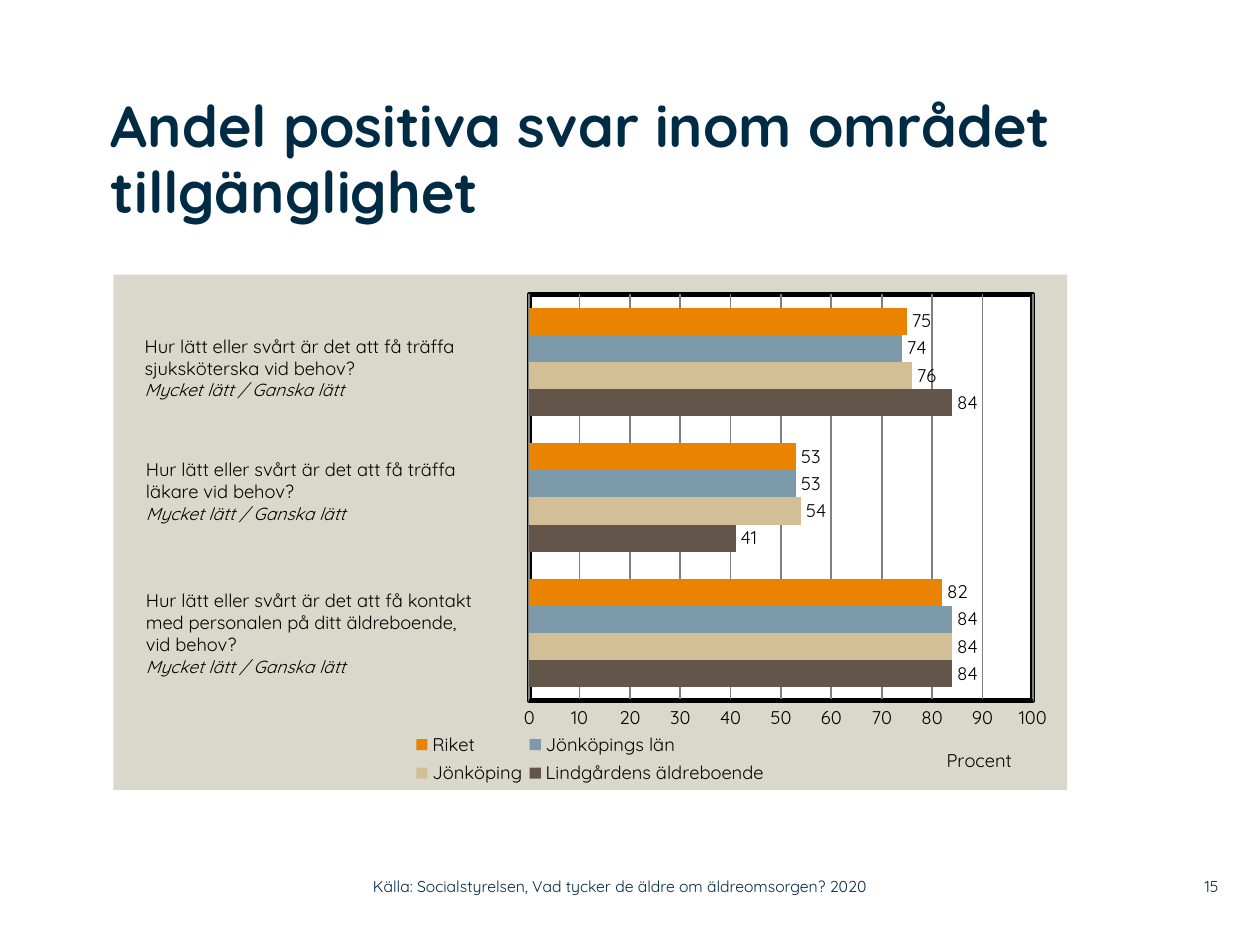
from dataclasses import dataclass
from lxml import etree
from pptx import Presentation
from pptx import util as u
from pptx.chart.data import CategoryChartData
from pptx.dml.color import RGBColor
from pptx.enum import chart as ch, text as tx
from pptx.oxml import parse_xml
from pptx.oxml.ns import nsdecls, qn


@dataclass(frozen=True)
class Theme:
    """Colours, type sizes and font of the slide."""
    font: str = "Quicksand"
    navy: str = "002B45"
    black: str = "000000"
    white: str = "FFFFFF"
    panel: str = "DAD7CB"
    grid: str = "808080"
    head: float = 33
    body: float = 10.5
    note: float = 10
    foot: float = 9


T = Theme()
SERIES = [
    ("Lindgårdens äldreboende", (84, 41, 84), "635549"),
    ("Jönköping", (84, 54, 76), "D3BF96"),
    ("Jönköpings län", (84, 53, 74), "7D9AAA"),
    ("Riket", (82, 53, 75), "E98300"),
]
ANSWER = "Mycket lätt / Ganska lätt"
ASKS = [
    ((1.05, 2.61, 3, 0.63),
     ["Hur lätt eller svårt är det att få träffa sjuksköterska vid behov?"]),
    ((1.06, 3.59, 2.91, 0.63),
     ["Hur lätt eller svårt är det att få träffa", "läkare vid behov?"]),
    ((1.06, 4.63, 2.99, 0.81),
     ["Hur lätt eller svårt är det att få kontakt",
      "med personalen på ditt äldreboende,", "vid behov?"]),
]


def style(font, size, color, bold=False, italic=False):
    """Set the face, size and colour of a font."""
    font.name, font.size = T.font, u.Pt(size)
    font.bold, font.italic = bold, italic
    font.color.rgb = RGBColor.from_string(color)


def add_text(slide, box, lines, size, color, bold=False, inset=True):
    """Add a wrapped text box with one paragraph per line."""
    frame = slide.shapes.add_textbox(*map(u.Inches, box)).text_frame
    frame.word_wrap = True
    if not inset:
        frame.margin_left = frame.margin_right = 0
        frame.margin_top = frame.margin_bottom = 0
    frame.text = "\n".join(lines)
    for para in frame.paragraphs:
        for run in para.runs:
            style(run.font, size, color, bold)
    return frame


def add_title(slide, box):
    """Add the heading."""
    lines = ["Andel positiva svar inom området tillgänglighet"]
    frame = add_text(slide, box, lines, T.head, T.navy, True, False)
    frame.paragraphs[0].line_spacing = 0.95


def add_ask(slide, box, lines):
    """Add one question with its answer options in italics."""
    frame = add_text(slide, box, lines + [ANSWER], T.body, T.black)
    style(frame.paragraphs[-1].runs[0].font, T.note, T.black, italic=True)


def add_foot(slide, box, line, align):
    """Add one footer text."""
    frame = add_text(slide, box, [line], T.foot, T.navy, inset=False)
    frame.vertical_anchor = tx.MSO_ANCHOR.MIDDLE
    frame.paragraphs[0].alignment = align


def make_layout(inner=False, **parts):
    """Return a manual chart layout with the given fractions."""
    layout = parse_xml(f"<c:layout {nsdecls('c')}><c:manualLayout/></c:layout>")
    if inner:
        etree.SubElement(layout[0], qn("c:layoutTarget")).set("val", "inner")
    for key in "xy":
        etree.SubElement(layout[0], qn(f"c:{key}Mode")).set("val", "edge")
    for key, val in parts.items():
        etree.SubElement(layout[0], qn(f"c:{key}")).set("val", str(val))
    return layout


def set_layout(node, layout, after=None):
    """Put a layout in a chart part, after the named child if any."""
    for old in node.findall(qn("c:layout")):
        node.remove(old)
    node.insert(0 if after is None else node.index(node.find(qn(after))) + 1, layout)


def make_fill(color, line=""):
    """Return shape properties with a solid fill and an optional line."""
    return parse_xml(
        f"<c:spPr {nsdecls('c', 'a')}><a:solidFill><a:srgbClr val='{color}'/>"
        f"</a:solidFill>{line}</c:spPr>")


def set_axes(chart):
    """Hide the category axis and style the percent axis."""
    chart.category_axis.visible = False
    axis = chart.value_axis
    axis.minimum_scale, axis.maximum_scale, axis.major_unit = 0, 100, 10
    axis.major_tick_mark = ch.XL_TICK_MARK.NONE
    axis.has_major_gridlines = True
    grid = axis.major_gridlines.format.line
    grid.color.rgb, grid.width = RGBColor.from_string(T.grid), u.Pt(1)
    line = axis.format.line
    line.color.rgb, line.width = RGBColor.from_string(T.black), u.Pt(2)
    style(axis.tick_labels.font, T.body, T.black)
    title = axis.axis_title
    title.text_frame.text = "Procent"
    style(title.text_frame.paragraphs[0].runs[0].font, T.body, T.black)
    set_layout(title._element, make_layout(x=0.87, y=0.91), "c:tx")


def add_bars(slide, box):
    """Add the bar chart with its legend."""
    data = CategoryChartData()
    data.categories = ["1", "2", "3"]
    for name, vals, _ in SERIES:
        data.add_series(name, vals)
    chart = slide.shapes.add_chart(
        ch.XL_CHART_TYPE.BAR_CLUSTERED, *map(u.Inches, box), data).chart
    chart.has_title = False
    style(chart.font, T.body, T.black)
    plot = chart.plots[0]
    plot.gap_width, plot.overlap, plot.vary_by_categories = 100, 0, False
    for ser, (_, _, color) in zip(plot.series, SERIES):
        ser.format.fill.solid()
        ser.format.fill.fore_color.rgb = RGBColor.from_string(color)
        labels = ser.data_labels
        labels.show_value = True
        labels.position = ch.XL_LABEL_POSITION.OUTSIDE_END
        style(labels.font, T.body, T.black)
    set_axes(chart)
    chart.has_legend = True
    legend = chart.legend
    legend.position = ch.XL_LEGEND_POSITION.BOTTOM
    legend.include_in_layout = False
    style(legend.font, T.body, T.black)
    set_layout(legend._element, make_layout(x=0.31, y=0.88, w=0.38, h=0.12), "c:legendPos")
    space = chart._chartSpace
    area = space.chart.plotArea
    set_layout(area, make_layout(True, x=0.436, y=0.038, w=0.528, h=0.789))
    edge = (f"<a:ln w='{u.Pt(3)}'><a:solidFill><a:srgbClr val='{T.black}'/>"
            "</a:solidFill></a:ln>")
    area.append(make_fill(T.white, edge))
    space.chart.addnext(make_fill(T.panel, "<a:ln><a:noFill/></a:ln>"))


def main():
    """Build and save the slide."""
    deck = Presentation()
    deck.slide_width, deck.slide_height = u.Inches(10), u.Inches(7.5)
    slide = deck.slides.add_slide(deck.slide_layouts[6])
    add_foot(slide, (9.2, 6.89, 0.47, 0.29), "15", tx.PP_ALIGN.RIGHT)
    add_foot(slide, (2.96, 6.89, 4.43, 0.29),
             "Källa: Socialstyrelsen, Vad tycker de äldre om äldreomsorgen? 2020",
             tx.PP_ALIGN.LEFT)
    add_bars(slide, (0.9, 2.18, 7.57, 4.09))
    for box, lines in ASKS:
        add_ask(slide, box, lines)
    add_title(slide, (0.88, 0.75, 7.6, 1.42))
    deck.save("out.pptx")


if __name__ == "__main__":
    main()
